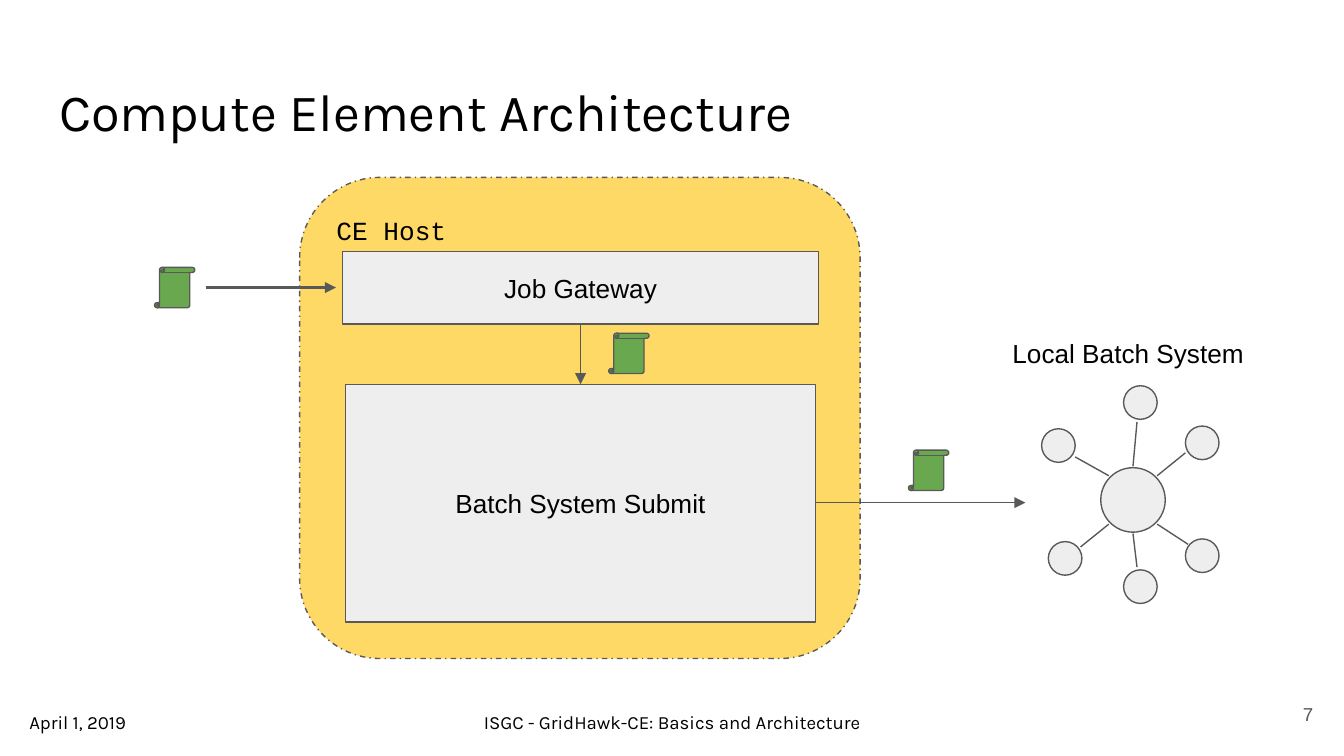
from dataclasses import dataclass

from lxml.etree import SubElement
from pptx import Presentation
from pptx.dml.color import RGBColor
from pptx.enum.dml import MSO_LINE_DASH_STYLE as Dash
from pptx.enum.shapes import MSO_CONNECTOR as Connector
from pptx.enum.shapes import MSO_SHAPE as Preset
from pptx.enum.text import MSO_ANCHOR as Anchor
from pptx.enum.text import MSO_AUTO_SIZE as AutoSize
from pptx.enum.text import PP_ALIGN as Align
from pptx.oxml.ns import qn
from pptx.util import Inches, Pt

COLORS = {
    "text": "000000",
    "line": "595959",
    "host": "FFD966",
    "job": "6AA84F",
    "block": "EEEEEE",
}


@dataclass
class Label:
    text: str
    size: float = 14
    font: str = "Arial"
    align: Align = Align.CENTER
    anchor: Anchor = Anchor.MIDDLE
    color: str = "text"


@dataclass
class Box:
    left: float
    top: float
    width: float
    height: float

    def lengths(self) -> list:
        return [Inches(n) for n in (self.left, self.top, self.width, self.height)]


@dataclass
class Node:
    """A worker circle and the spoke that joins it to the hub."""
    left: float
    top: float
    start: tuple[float, float]
    end: tuple[float, float]


def color(name: str) -> RGBColor:
    return RGBColor.from_string(COLORS[name])


def write(shape, label: Label) -> None:
    frame = shape.text_frame
    frame.word_wrap = True
    frame.auto_size = AutoSize.NONE
    frame.vertical_anchor = label.anchor
    frame.margin_left = frame.margin_right = Inches(0.1)
    frame.margin_top = frame.margin_bottom = Inches(0.1)
    para = frame.paragraphs[0]
    para.alignment = label.align
    span = para.add_run()
    span.text = label.text
    span.font.size = Pt(label.size)
    span.font.name = label.font
    span.font.color.rgb = color(label.color)


def add_text(shapes, box: Box, label: Label) -> None:
    write(shapes.add_textbox(*box.lengths()), label)


def add_block(shapes, preset: Preset, box: Box, fill: str, label: Label | None = None):
    shape = shapes.add_shape(preset, *box.lengths())
    shape.shadow.inherit = False
    shape.fill.solid()
    shape.fill.fore_color.rgb = color(fill)
    shape.line.color.rgb = color("line")
    shape.line.width = Pt(0.75)
    if label:
        write(shape, label)
    return shape


def add_line(shapes, start: tuple[float, float], end: tuple[float, float],
             width: float = 0.75, arrow: bool = False) -> None:
    ends = [Inches(n) for n in (*start, *end)]
    line = shapes.add_connector(Connector.STRAIGHT, *ends)
    line.line.color.rgb = color("line")
    line.line.width = Pt(width)
    if arrow:
        SubElement(line.line._get_or_add_ln(), qn("a:tailEnd"), type="triangle")
    SubElement(line._element.spPr, qn("a:effectLst"))


def main() -> None:
    # Page in 16:9
    deck = Presentation()
    deck.slide_width = Inches(10)
    deck.slide_height = Inches(10) * 9 // 16
    page = deck.slides.add_slide(deck.slide_layouts[5])
    shapes = page.shapes

    # Title
    title = shapes.title
    title.left, title.top, title.width, title.height = Box(0.34, 0.49, 9.32, 0.63).lengths()
    write(title, Label("Compute Element Architecture", 28, "Karla", Align.LEFT, Anchor.TOP))

    # Footer
    add_text(shapes, Box(0.12, 5.19, 1.43, 0.25),
             Label("April 1, 2019", 10, "Karla", Align.LEFT, Anchor.TOP))
    add_text(shapes, Box(3.46, 5.19, 3.08, 0.25),
             Label("ISGC - GridHawk-CE: Basics and Architecture", 10, "Karla", anchor=Anchor.TOP))
    add_text(shapes, Box(9.27, 5.1, 0.6, 0.43),
             Label("7", 10, align=Align.RIGHT, color="line"))

    # Compute element host with its two services
    host = add_block(shapes, Preset.ROUNDED_RECTANGLE, Box(2.23, 1.32, 4.17, 3.58), "host",
                     Label("CE Host", 14, "Courier New", Align.LEFT, Anchor.TOP))
    host.line.dash_style = Dash.DASH_DOT
    add_block(shapes, Preset.RECTANGLE, Box(2.55, 1.87, 3.54, 0.54), "block",
              Label("Job Gateway"))
    add_block(shapes, Preset.RECTANGLE, Box(2.57, 2.86, 3.5, 1.77), "block",
              Label("Batch System Submit"))

    # Jobs and the way they travel
    for left, top in [(1.15, 1.99), (4.53, 2.48), (6.76, 3.35)]:
        add_block(shapes, Preset.VERTICAL_SCROLL, Box(left, top, 0.3, 0.3), "job")
    add_line(shapes, (1.53, 2.14), (2.5, 2.14), width=1.5, arrow=True)
    add_line(shapes, (4.32, 2.41), (4.32, 2.86), arrow=True)
    add_line(shapes, (6.07, 3.74), (7.63, 3.74), arrow=True)

    # Local batch system: a hub with six workers
    add_text(shapes, Box(7.38, 2.41, 2.03, 0.36),
             Label("Local Batch System", anchor=Anchor.TOP))
    cluster = shapes.add_group_shape().shapes
    add_block(cluster, Preset.OVAL, Box(8.19, 3.48, 0.48, 0.48), "block")
    nodes = [
        Node(8.36, 2.87, (8.46, 3.14), (8.43, 3.47)),
        Node(8.82, 3.17, (8.82, 3.37), (8.61, 3.54)),
        Node(8.82, 4.01, (8.84, 4.05), (8.61, 3.9)),
        Node(8.36, 4.24, (8.46, 4.22), (8.43, 3.97)),
        Node(7.8, 4.03, (8.04, 4.07), (8.25, 3.9)),
        Node(7.75, 3.19, (8, 3.4), (8.25, 3.54)),
    ]
    for node in nodes:
        add_line(cluster, node.start, node.end)
        add_block(cluster, Preset.OVAL, Box(node.left, node.top, 0.25, 0.25), "block")

    deck.save("out.pptx")


if __name__ == "__main__":
    main()
